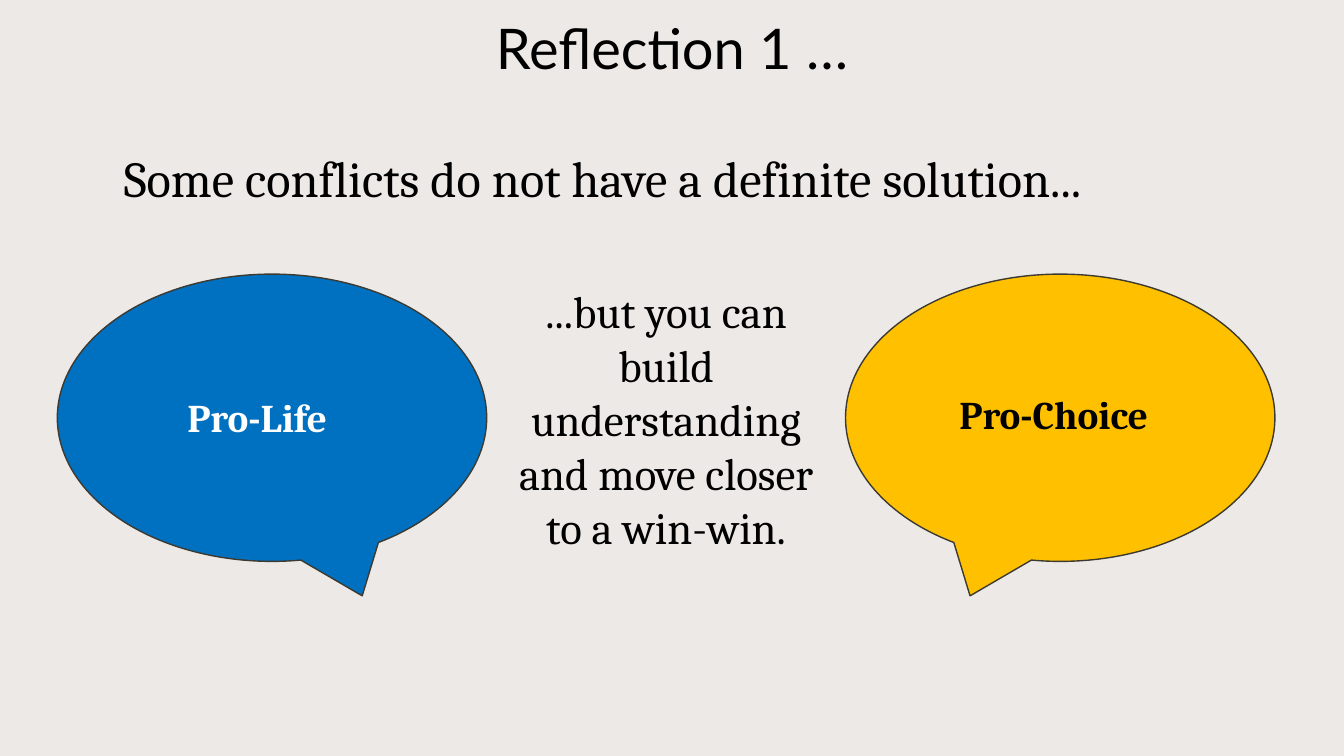
from pptx import Presentation
from pptx.dml.color import RGBColor as RGB
from pptx.enum.shapes import MSO_SHAPE as Shape
from pptx.enum.text import MSO_ANCHOR as Anchor, MSO_AUTO_SIZE as AutoSize, PP_ALIGN as Align
from pptx.util import Pt

# Content: words, box (left, top, width, height), style
TITLE = ("Reflection 1 …", (0, 0, 960, 62), "title")
# Bubbles: left edge, fill, side of the tail tip
BUBBLES = [(604, "choice", -1), (41, "life", 1)]
STATEMENTS = [
    ("Some conflicts do not have a definite solution...", (81.4, 101.5, 890, 51), "lead"),
    ("Pro-Life", (126.7, 277.2, 152, 41), "life_label"),
    ("Pro-Choice", (678.2, 275, 178, 41), "choice_label"),
    ("...but you can build understanding and move closer to a win-win.",
     (357.1, 199.4, 237.6, 240), "closing"),
]
BUBBLE_TOP, BUBBLE_WIDTH, BUBBLE_HEIGHT = 195.8, 306.7, 205.2
TAIL_X, TAIL_Y = 0.21, 0.62

BLACK, WHITE = RGB.from_string("000000"), RGB.from_string("FFFFFF")
THEME = {
    "background": RGB.from_string("EDE9E7"),
    "outline": RGB.from_string("3C3A31"),
    "life": RGB.from_string("0070C0"),
    "choice": RGB.from_string("FFC000"),
    "fonts": {
        "title": {"name": "Lato", "size": Pt(40), "bold": False},
        "lead": {"name": "Cambria", "size": Pt(36)},
        "life_label": {"name": "Cambria", "size": Pt(28), "bold": True, "color": WHITE},
        "choice_label": {"name": "Cambria", "size": Pt(28), "bold": True},
        "closing": {"name": "Cambria", "size": Pt(32)},
    },
    "paragraphs": {
        "title": {"alignment": Align.CENTER, "line_spacing": 0.9},
        "closing": {"alignment": Align.CENTER},
    },
}


def write(frame, words, style):
    frame.word_wrap = True
    frame.text = words
    line = frame.paragraphs[0]
    for key, value in THEME["paragraphs"].get(style, {}).items():
        setattr(line, key, value)
    font = line.runs[0].font
    font.color.rgb = BLACK
    for key, value in THEME["fonts"][style].items():
        if key == "color":
            font.color.rgb = value
        else:
            setattr(font, key, value)


deck = Presentation()
deck.slide_width, deck.slide_height = Pt(960), Pt(540)
slide = deck.slides.add_slide(deck.slide_layouts[5])
slide.background.fill.solid()
slide.background.fill.fore_color.rgb = THEME["background"]

# Title
words, box, style = TITLE
heading = slide.shapes.title
for side, length in zip(("left", "top", "width", "height"), box):
    setattr(heading, side, Pt(length))
write(heading.text_frame, words, style)
heading.text_frame.vertical_anchor = Anchor.BOTTOM
heading.text_frame.auto_size = AutoSize.NONE

# Facing speech bubbles
for left, colour, side in BUBBLES:
    bubble = slide.shapes.add_shape(Shape.OVAL_CALLOUT, Pt(left), Pt(BUBBLE_TOP),
                                    Pt(BUBBLE_WIDTH), Pt(BUBBLE_HEIGHT))
    bubble.adjustments[0] = side * TAIL_X
    bubble.adjustments[1] = TAIL_Y
    bubble.shadow.inherit = False
    bubble.fill.solid()
    bubble.fill.fore_color.rgb = THEME[colour]
    bubble.line.color.rgb = THEME["outline"]
    bubble.line.width = Pt(1)

# Statements and bubble labels
for words, box, style in STATEMENTS:
    statement = slide.shapes.add_textbox(*map(Pt, box))
    write(statement.text_frame, words, style)

deck.save("out.pptx")
